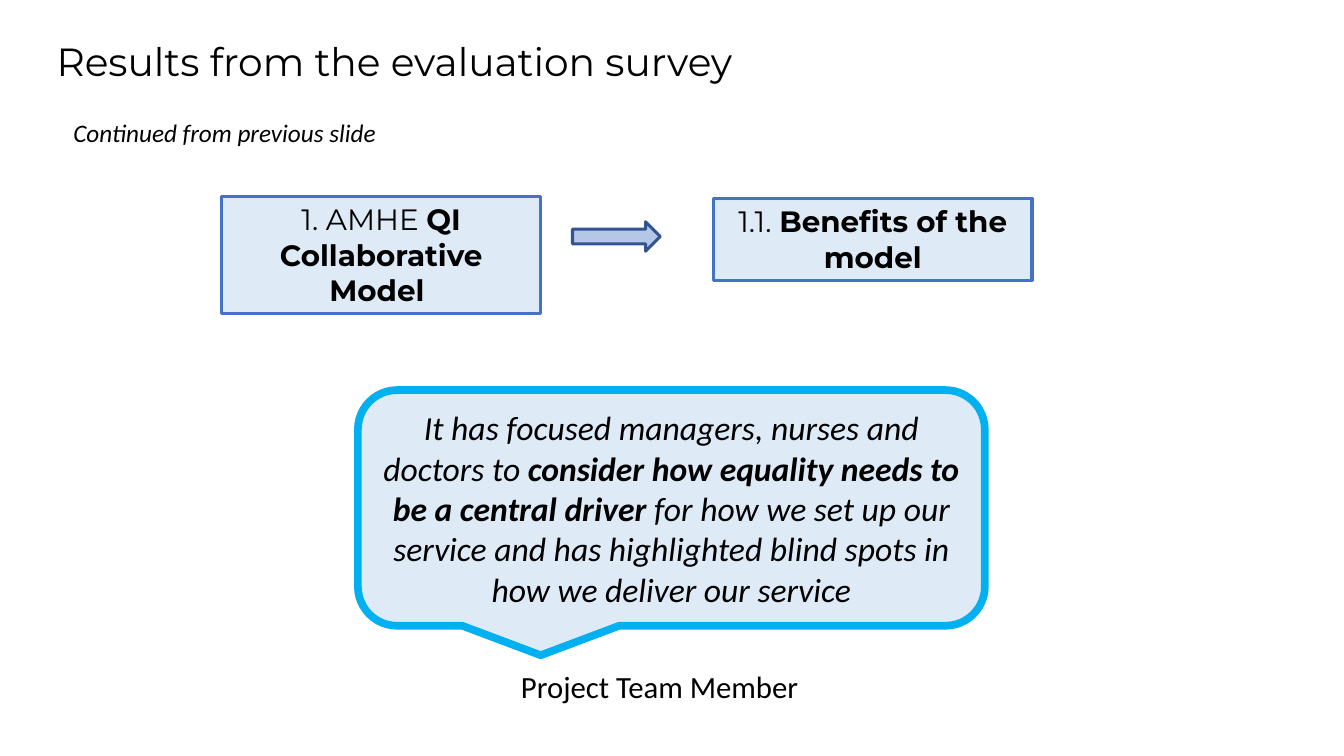
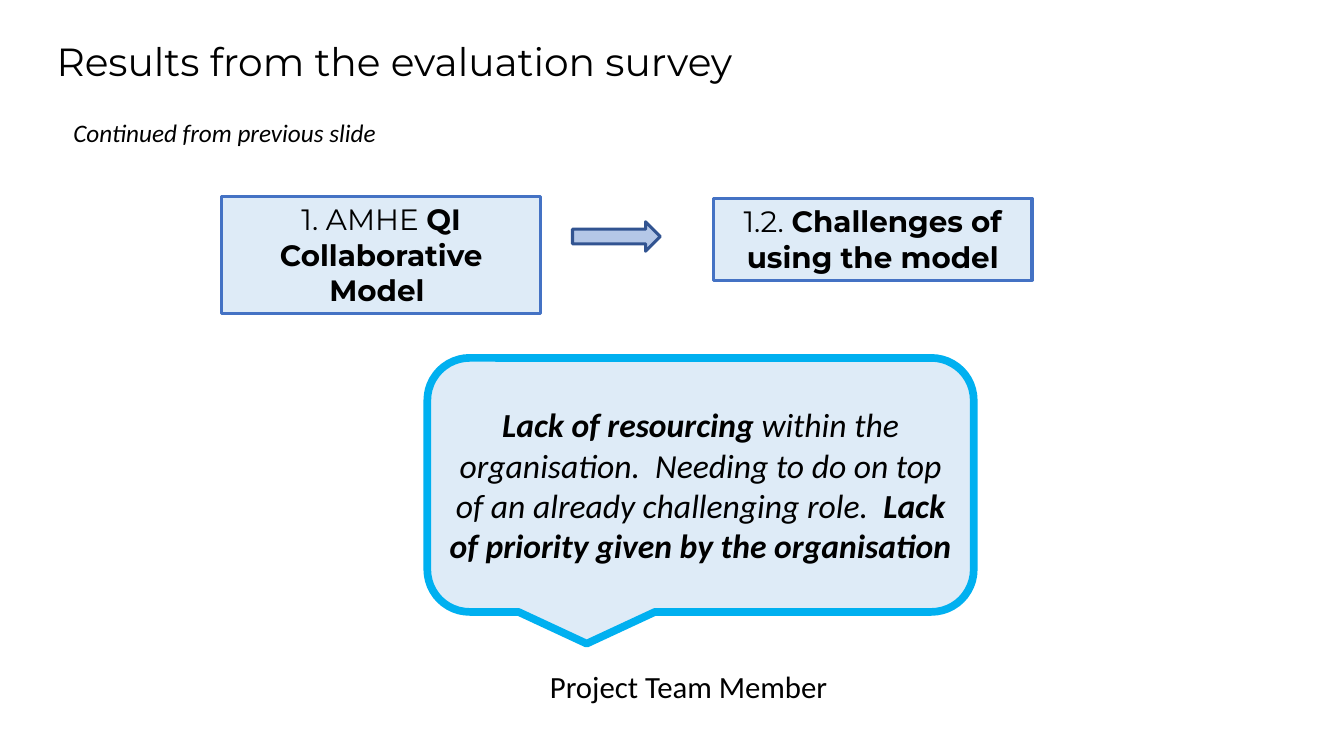
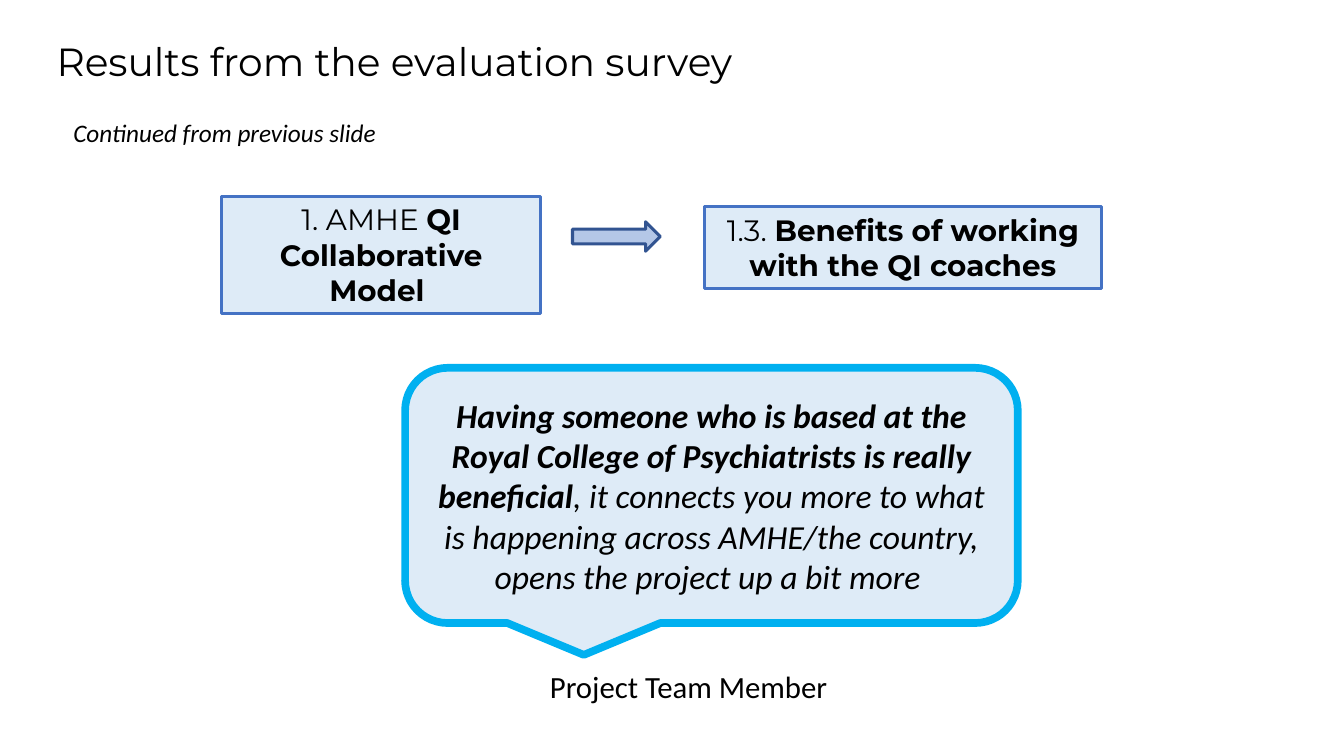
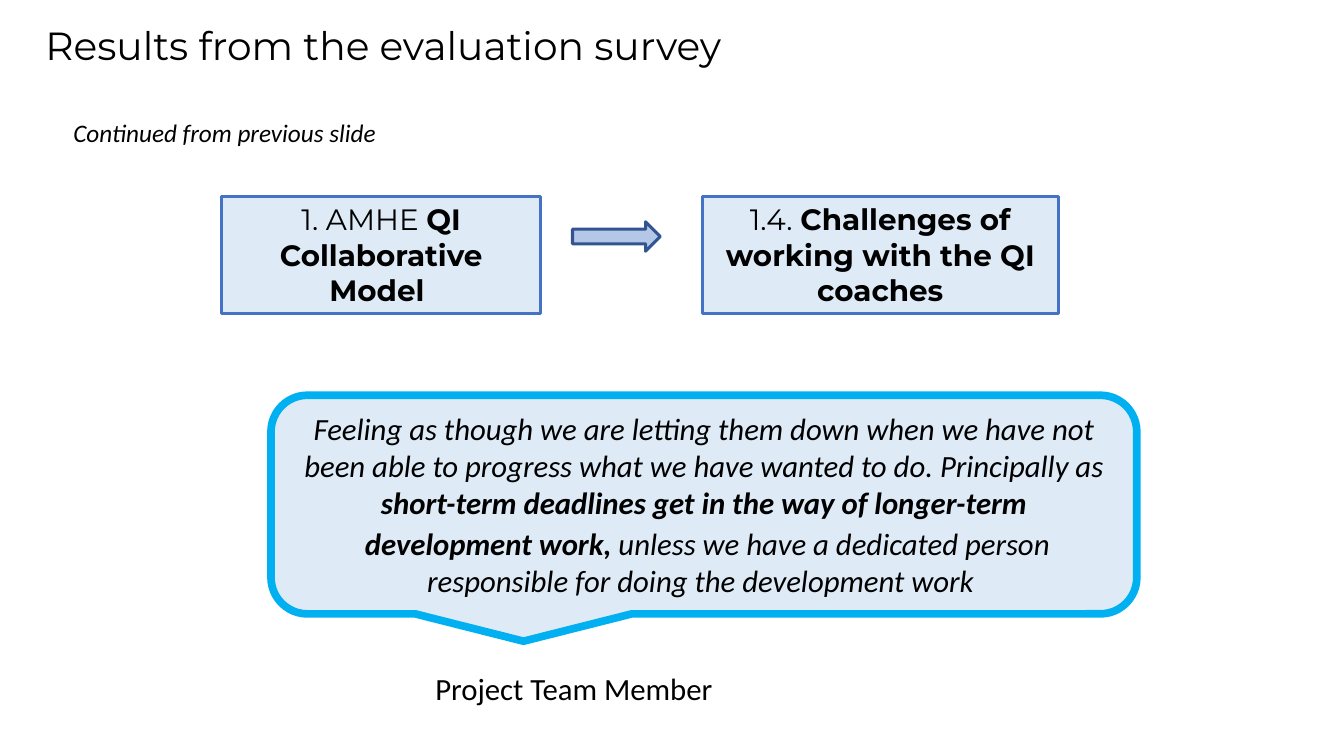
"""Builds the four survey result slides."""
from dataclasses import dataclass

from pptx import Presentation
from pptx.dml.color import RGBColor
from pptx.enum.shapes import MSO_SHAPE
from pptx.enum.text import MSO_ANCHOR, MSO_AUTO_SIZE, PP_ALIGN
from pptx.util import Cm, Pt


@dataclass(frozen=True)
class Theme:
    """Colours, fonts and type sizes of the deck."""
    text: str = "000000"
    panel: str = "DEEBF7"
    panel_line: str = "4472C4"
    arrow: str = "B4C7E7"
    arrow_line: str = "325491"
    quote_line: str = "00B0F0"
    heading_font: str = "Montserrat"
    body_font: str = "Calibri"
    title_size: float = 28
    topic_size: float = 21
    note_size: float = 18
    speaker_size: float = 22
    thin: float = 2.25
    thick: float = 5.5


@dataclass(frozen=True)
class Finding:
    """One survey finding; areas are left, top, width, height in centimetres and spans are (text, bold)."""
    topic: tuple
    topic_area: tuple
    quote: tuple
    quote_area: tuple
    speaker_at: tuple
    quote_size: float = 24
    title_at: tuple = (1.17, 0)


THEME = Theme()
MODEL = (("1. AMHE ", False), ("QI Collaborative Model ", True))
MODEL_AREA = (5.59, 4.95, 8.03, 2.95)
ARROW_AREA = (14.43, 5.59, 2.21, 0.74)
NOTE_AREA = (1.6, 2.82, 9.58, 1.02)
TITLE_SIZE = (30.96, 3.23)
SPEAKER_SIZE = (8.08, 1.19)

FINDINGS = (
    Finding(
        topic=(("1.1. ", False), ("Benefits of the model", True)),
        topic_area=(17.98, 5, 8.03, 2.06),
        quote=((
            ("It has focused managers, nurses and doctors to ", False),
            ("consider how equality needs to be a central driver ", True),
            ("for how we set up our service and has highlighted blind spots "
             "in how we deliver our service", False),
        ),),
        quote_area=(9.02, 9.83, 15.8, 5.94),
        speaker_at=(12.88, 16.71),
    ),
    Finding(
        topic=(("1.2. ", False), ("Challenges of using the model", True)),
        topic_area=(17.98, 5, 8.03, 2.06),
        quote=((
            ("Lack of resourcing ", True),
            ("within the organisation.  Needing to do on top of an already "
             "challenging role.  ", False),
            ("Lack of priority given by the organisation ", True),
        ),),
        quote_area=(10.77, 9.02, 13.77, 6.4),
        speaker_at=(13.61, 16.69),
    ),
    Finding(
        topic=(("1.3. ", False), ("Benefits of working with the QI coaches", True)),
        topic_area=(17.75, 5.21, 10.01, 2.06),
        quote=((
            ("Having someone who is based at the Royal College of Psychiatrists "
             "is really beneficial", True),
            (", it connects you more to what is happening across AMHE/the country, "
             "opens the project up a bit more ", False),
        ),),
        quote_area=(10.21, 9.27, 15.44, 6.43),
        speaker_at=(13.61, 16.69),
    ),
    Finding(
        topic=(("1.4. ", False), ("Challenges of working with the QI coaches", True)),
        topic_area=(17.7, 4.95, 8.97, 2.95),
        quote=(
            (
                ("Feeling as though we are letting them down when we have not been "
                 "able to progress what we have wanted to do. Principally as ", False),
                ("short-term deadlines get in the way of longer-term", True),
            ),
            (
                (" development work,", True),
                (" unless we have a dedicated person responsible for doing the "
                 "development work ", False),
            ),
        ),
        quote_area=(6.83, 9.96, 21.82, 5.51),
        speaker_at=(10.72, 16.74),
        quote_size=22,
        title_at=(0.89, -0.41),
    ),
)


def lengths(area):
    """Turn centimetres into lengths."""
    return [Cm(value) for value in area]


def write(para, spans, font, size, italic=False, align=PP_ALIGN.LEFT):
    """Add the spans to a paragraph run by run."""
    para.alignment = align
    for text, bold in spans:
        span = para.add_run()
        span.text = text
        span.font.name = font
        span.font.size = Pt(size)
        span.font.bold = bold
        span.font.italic = italic
        span.font.color.rgb = RGBColor.from_string(THEME.text)


def add_title(page, position):
    """Place and format the title placeholder."""
    title = page.shapes.title
    title.left, title.top, title.width, title.height = lengths(position + TITLE_SIZE)
    frame = title.text_frame
    frame.auto_size = MSO_AUTO_SIZE.NONE
    frame.vertical_anchor = MSO_ANCHOR.MIDDLE
    para = frame.paragraphs[0]
    para.line_spacing = 0.9
    write(para, (("Results from the evaluation survey", False),),
          THEME.heading_font, THEME.title_size)


def add_label(page, area, text, size, italic=False):
    """Add a plain line of body text."""
    frame = page.shapes.add_textbox(*lengths(area)).text_frame
    frame.word_wrap = True
    write(frame.paragraphs[0], ((text, False),), THEME.body_font, size, italic)


def add_figure(page, kind, area, fill, line, weight):
    """Add a filled and outlined preset shape."""
    shape = page.shapes.add_shape(kind, *lengths(area))
    shape.shadow.inherit = False
    shape.fill.solid()
    shape.fill.fore_color.rgb = RGBColor.from_string(fill)
    shape.line.color.rgb = RGBColor.from_string(line)
    shape.line.width = Pt(weight)
    return shape


def add_topic(page, area, spans):
    """Add a topic box."""
    box = add_figure(page, MSO_SHAPE.RECTANGLE, area,
                     THEME.panel, THEME.panel_line, THEME.thin)
    frame = box.text_frame
    frame.word_wrap = True
    frame.auto_size = MSO_AUTO_SIZE.SHAPE_TO_FIT_TEXT
    frame.vertical_anchor = MSO_ANCHOR.TOP
    write(frame.paragraphs[0], spans, THEME.heading_font, THEME.topic_size,
          align=PP_ALIGN.CENTER)


def add_quote(page, area, paragraphs, size):
    """Add a speech bubble with a quotation."""
    bubble = add_figure(page, MSO_SHAPE.ROUNDED_RECTANGULAR_CALLOUT, area,
                        THEME.panel, THEME.quote_line, THEME.thick)
    frame = bubble.text_frame
    frame.word_wrap = True
    frame.vertical_anchor = MSO_ANCHOR.MIDDLE
    for index, spans in enumerate(paragraphs):
        para = frame.add_paragraph() if index else frame.paragraphs[0]
        para.space_after = Pt(3)
        write(para, spans, THEME.body_font, size, italic=True, align=PP_ALIGN.CENTER)


def add_finding(deck, finding):
    """Add the slide of one finding."""
    page = deck.slides.add_slide(deck.slide_layouts.get_by_name("Title Only"))
    add_title(page, finding.title_at)
    add_label(page, NOTE_AREA, "Continued from previous slide", THEME.note_size, italic=True)
    add_topic(page, MODEL_AREA, MODEL)
    add_figure(page, MSO_SHAPE.RIGHT_ARROW, ARROW_AREA,
               THEME.arrow, THEME.arrow_line, THEME.thin)
    add_topic(page, finding.topic_area, finding.topic)
    add_quote(page, finding.quote_area, finding.quote, finding.quote_size)
    add_label(page, finding.speaker_at + SPEAKER_SIZE, "Project Team Member",
              THEME.speaker_size)


def main():
    """Build and save the deck."""
    deck = Presentation()
    deck.slide_width, deck.slide_height = lengths((33.87, 19.05))
    for finding in FINDINGS:
        add_finding(deck, finding)
    deck.save("out.pptx")


if __name__ == "__main__":
    main()
